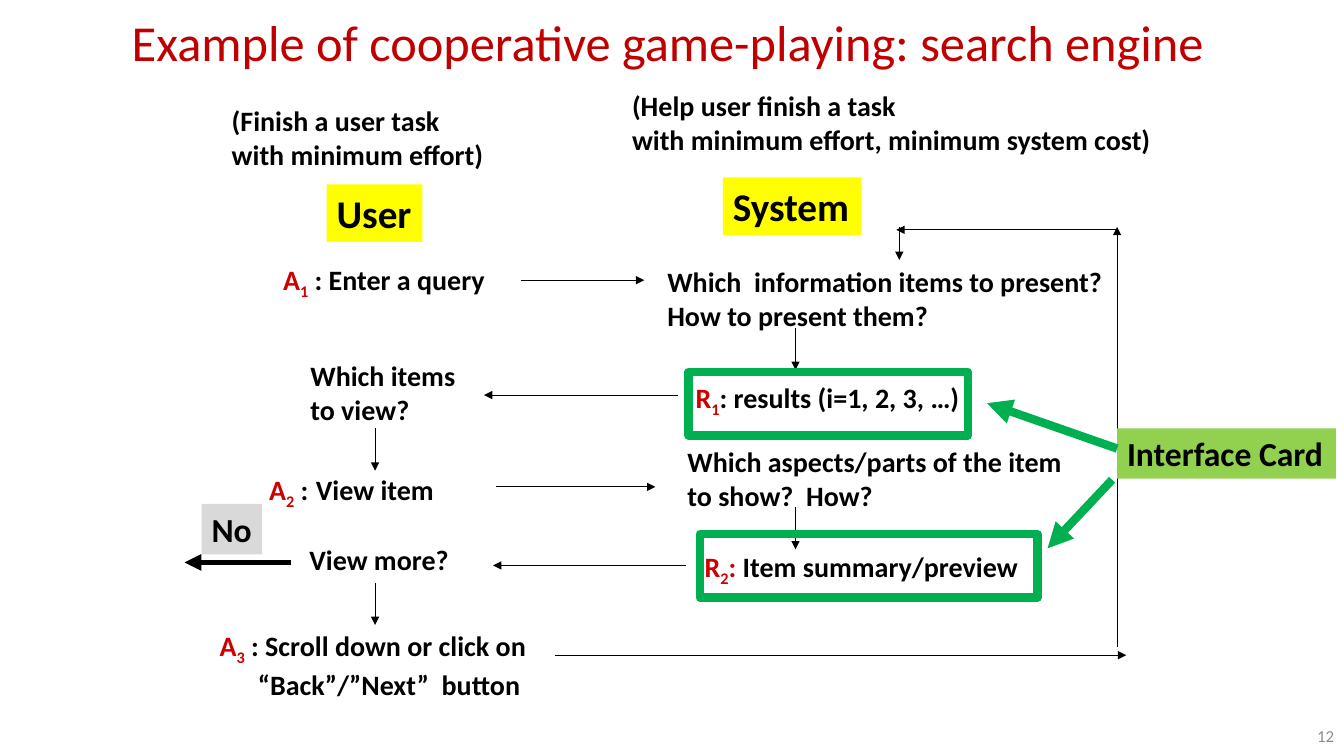
from lxml import etree
from pptx import Presentation
from pptx.dml.color import RGBColor
from pptx.enum.shapes import MSO_CONNECTOR as CONN, MSO_SHAPE as SHAPE
from pptx.enum.text import MSO_ANCHOR as ANCHOR, MSO_AUTO_SIZE as FIT, PP_ALIGN as ALIGN
from pptx.oxml.ns import qn
from pptx.util import Inches, Pt

COLORS = {
    "black": "000000", "title": "C00000", "tag": "CC0000", "yellow": "FFFF00",
    "grey": "D9D9D9", "number": "8C8C8C", "green": "00B050", "lime": "92D050",
}
FONT = "Calibri"


def rgb(name):
    return RGBColor.from_string(COLORS[name])


def add_run(p, text, size=20, color="black", bold=True, sub=False):
    r = p.add_run()
    r.text = text
    r.font.name, r.font.size, r.font.bold = FONT, Pt(size), bold
    r.font.color.rgb = rgb(color)
    if sub:
        r.font._element.set("baseline", "-25000")


def write(sp, lines, align=ALIGN.LEFT, anchor=ANCHOR.TOP, wrap=False, fit=True, **fmt):
    """Each line is a string or a list of (text, format) runs."""
    tf = sp.text_frame
    tf.word_wrap = wrap
    tf.auto_size = FIT.SHAPE_TO_FIT_TEXT if fit else FIT.NONE
    tf.vertical_anchor = anchor
    for i, line in enumerate(lines):
        p = tf.add_paragraph() if i else tf.paragraphs[0]
        p.alignment = align
        runs = [(line, {})] if isinstance(line, str) else line
        for text, extra in runs:
            add_run(p, text, **{**fmt, **extra})


def add_label(s, box, *lines, **fmt):
    sp = s.shapes.add_textbox(*map(Inches, box))
    write(sp, lines, **fmt)
    return sp


def add_box(s, box, fill=None, outline=None):
    sp = s.shapes.add_shape(SHAPE.RECTANGLE, *map(Inches, box))
    sp.shadow.inherit = False
    if fill:
        sp.fill.solid()
        sp.fill.fore_color.rgb = rgb(fill)
    else:
        sp.fill.background()
    if outline:
        sp.line.color.rgb = rgb(outline)
        sp.line.width = Pt(6)
    else:
        sp.line.fill.background()
    return sp


def add_arrow(s, x1, y1, x2, y2, color="black", width=0.75):
    c = s.shapes.add_connector(CONN.STRAIGHT, *map(Inches, (x1, y1, x2, y2)))
    c.line.color.rgb = rgb(color)
    c.line.width = Pt(width)
    etree.SubElement(c.line._get_or_add_ln(), qn("a:tailEnd"), type="triangle")
    etree.SubElement(c._element.spPr, qn("a:effectLst"))


def tagged(letter, number, *rest):
    """Runs for a red tag with a subscript number, then the given runs."""
    return [(letter, {"color": "tag"}), (number, {"color": "tag", "sub": True}), *rest]


def main():
    prs = Presentation()
    prs.slide_width, prs.slide_height = Inches(13.33), Inches(7.5)
    s = prs.slides.add_slide(prs.slide_layouts[6])

    # Title
    add_label(s, (0, -0.17, 13.25, 1.17), "Example of cooperative game-playing: search engine",
              size=36, color="title", bold=False, align=ALIGN.CENTER,
              anchor=ANCHOR.MIDDLE, wrap=True, fit=False)

    # Players and their goals
    write(add_box(s, (3.24, 1.83, 0.95, 0.57), "yellow"), ["User"], size=28)
    write(add_box(s, (7.17, 1.76, 1.37, 0.57), "yellow"), ["System"], size=28)
    add_label(s, (2.2, 0.98, 2.72, 0.77), "(Finish a user task", "with minimum effort)")
    add_label(s, (6.17, 0.83, 5.39, 0.77), "(Help user finish a task",
              "with minimum effort, minimum system cost)")

    # User moves
    add_label(s, (2.71, 2.56, 2.3, 0.44), tagged("A", "1", (" : Enter a query", {})))
    add_label(s, (2.98, 3.51, 1.71, 0.77), "Which items", "to view?")
    add_label(s, (2.57, 4.58, 1.86, 0.5),
              tagged("A", "2", (" :", {}), (" ", {"size": 24, "bold": False}), ("View item", {})))
    add_label(s, (2.97, 5.33, 1.6, 0.44), "View more?")
    scroll = add_label(s, (2.08, 6.19, 3.28, 0.77),
                       tagged("A", "3", (" : Scroll down or click on", {})),
                       "“Back”/”Next”  button")
    button_line = scroll.text_frame.paragraphs[1]._p.get_or_add_pPr()
    button_line.set("marL", str(Inches(0.38)))

    # System moves
    add_label(s, (6.52, 2.58, 4.55, 0.77), "Which  information items to present?",
              "How to present them?")
    add_label(s, (6.8, 3.73, 2.85, 0.44), tagged("R", "1", (": results (i=1, 2, 3, …)", {})))
    add_label(s, (6.72, 4.36, 3.94, 0.77), "Which aspects/parts of the item", "to show?  How?")
    add_label(s, (6.89, 5.4, 3.35, 0.44),
              tagged("R", "2", (":", {"color": "tag"}), (" Item summary/preview", {})))

    # Arrows between user and system
    for x1, x2, y in ((5.17, 6.39, 2.78), (6.72, 4.8, 3.92), (4.92, 6.5, 4.83), (6.8, 4.89, 5.61)):
        add_arrow(s, x1, y, x2, y)

    # Arrows down each column
    for x, y in ((7.89, 3.25), (3.72, 4.25), (7.89, 5.03), (3.72, 5.78)):
        add_arrow(s, x, y, x, y + 0.42)

    # Loop back to the system
    add_arrow(s, 5.5, 6.5, 11.17, 6.5)
    add_arrow(s, 11.08, 6.42, 11.08, 2.25)
    add_arrow(s, 11.08, 2.28, 8.89, 2.28)
    add_arrow(s, 8.92, 2.25, 8.92, 2.58)

    # Exit
    add_arrow(s, 2.89, 5.58, 1.83, 5.58, width=4)
    write(add_box(s, (2, 5, 0.6, 0.5), "grey"), ["No"], size=24)

    # Interface card
    add_box(s, (6.83, 3.69, 2.77, 0.63), outline="green")
    add_box(s, (6.94, 5.3, 3.35, 0.63), outline="green")
    write(add_box(s, (11.08, 4.25, 2.17, 0.5), "lime"), ["Interface Card"], size=24, wrap=True)
    add_arrow(s, 11.08, 4.45, 9.79, 4, "green", 6)
    add_arrow(s, 11.03, 4.76, 10.39, 5.44, "green", 6)

    # Slide number
    add_label(s, (10.22, 7.1, 3.11, 0.4), "12", size=12, color="number", bold=False,
              align=ALIGN.RIGHT, anchor=ANCHOR.MIDDLE, wrap=True, fit=False)

    prs.save("out.pptx")


if __name__ == "__main__":
    main()
